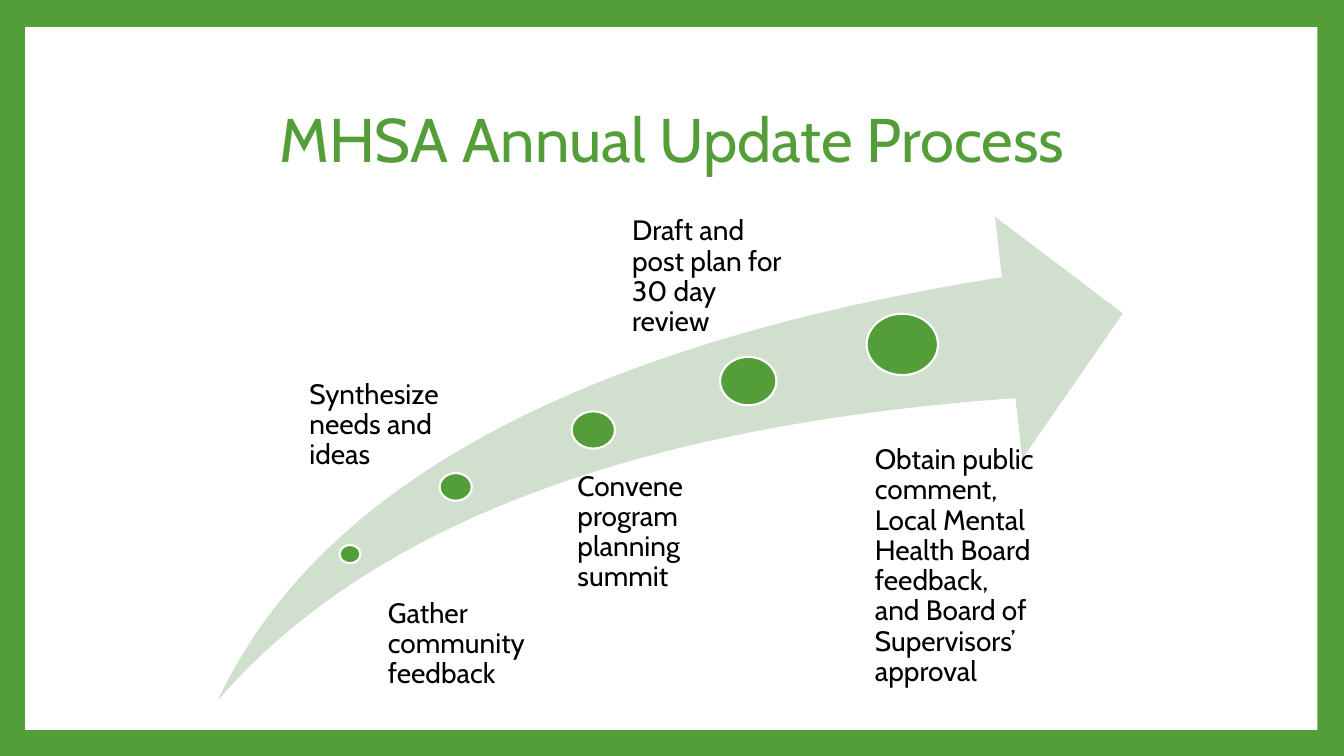
from pptx import Presentation
from pptx.dml.color import RGBColor
from pptx.enum import shapes, text
from pptx.util import Pt

COLORS = {"green": "549E39", "pale": "D1DFCE", "white": "FFFFFF", "black": "000000"}
FONT = "Cabin"
DOT_RATIO = 0.86  # height of a milestone dot against its width

# Offsets from the arrow's corner, in points:
# wording, dot (centre x, centre y, width), label (left, top, width, height), indent
STEPS = [
    ("Gather community feedback",
     (94.5, 241, 15), (115, 273, 112.5, 65.5), 6.5),
    ("Synthesize needs and ideas",
     (170, 193, 23), (54.7, 116.6, 111, 66), 10.8),
    ("Convene program planning summit",
     (268.3, 152.3, 31), (242.6, 182.2, 124.6, 126), 14.4),
    ("Draft and post plan for 30 day review",
     (379, 117.4, 40.2), (278, 0, 126.7, 70.5), 18),
    ("Obtain public comment, Local Mental Health Board feedback, "
     "and Board of Supervisors’ approval",
     (489, 91.2, 51), (446.4, 163.4, 138.2, 128), 23),
]


def rgb(name):
    return RGBColor.from_string(COLORS[name])


def style(paragraph, size, color):
    paragraph.font.name = FONT
    paragraph.font.size = Pt(size)
    paragraph.font.color.rgb = rgb(color)
    paragraph.line_spacing = 0.9


def filled_shape(slide, kind, box, fill, outline=None):
    shape = slide.shapes.add_shape(kind, *map(Pt, box))
    shape.shadow.inherit = False
    shape.fill.solid()
    shape.fill.fore_color.rgb = rgb(fill)
    if outline:
        shape.line.color.rgb = rgb(outline)
        shape.line.width = Pt(1.5)
    else:
        shape.line.fill.background()
    return shape


def frame(slide, box):
    """Green border around a white panel, kept behind everything else."""
    slide.background.fill.solid()
    slide.background.fill.fore_color.rgb = rgb("green")
    panel = filled_shape(slide, shapes.MSO_SHAPE.RECTANGLE, box, "white")
    slide.shapes.title.element.addprevious(panel.element)


def heading(slide, box, wording):
    title = slide.shapes.title
    title.left, title.top, title.width, title.height = map(Pt, box)
    title.text_frame.text = wording
    title.text_frame.vertical_anchor = text.MSO_ANCHOR.MIDDLE
    paragraph = title.text_frame.paragraphs[0]
    paragraph.alignment = text.PP_ALIGN.CENTER
    style(paragraph, 44, "green")


def step_label(slide, box, wording, indent):
    label = slide.shapes.add_textbox(*map(Pt, box)).text_frame
    label.word_wrap = True
    label.margin_left = Pt(indent)
    label.margin_top = label.margin_right = label.margin_bottom = 0
    label.text = wording
    style(label.paragraphs[0], 20, "black")


def process_arrow(slide, box, steps):
    left, top = box[:2]
    arrow = filled_shape(slide, shapes.MSO_SHAPE.SWOOSH_ARROW, box, "pale")
    arrow.adjustments[0] = arrow.adjustments[1] = 0.25
    for wording, (center_x, center_y, width), (x, y, *size), indent in steps:
        height = width * DOT_RATIO
        dot = (left + center_x - width / 2, top + center_y - height / 2, width, height)
        filled_shape(slide, shapes.MSO_SHAPE.OVAL, dot, "green", "white")
        step_label(slide, (left + x, top + y, *size), wording, indent)


def main():
    deck = Presentation()
    deck.slide_width, deck.slide_height = Pt(960), Pt(540)
    slide = deck.slides.add_slide(deck.slide_layouts.get_by_name("Title Only"))
    frame(slide, (18, 19.4, 923, 502))
    heading(slide, (91.4, 48.2, 777.6, 106.6), "MHSA Annual Update Process")
    process_arrow(slide, (155.5, 154.8, 646.5, 345.6), STEPS)
    deck.save("out.pptx")


if __name__ == "__main__":
    main()
